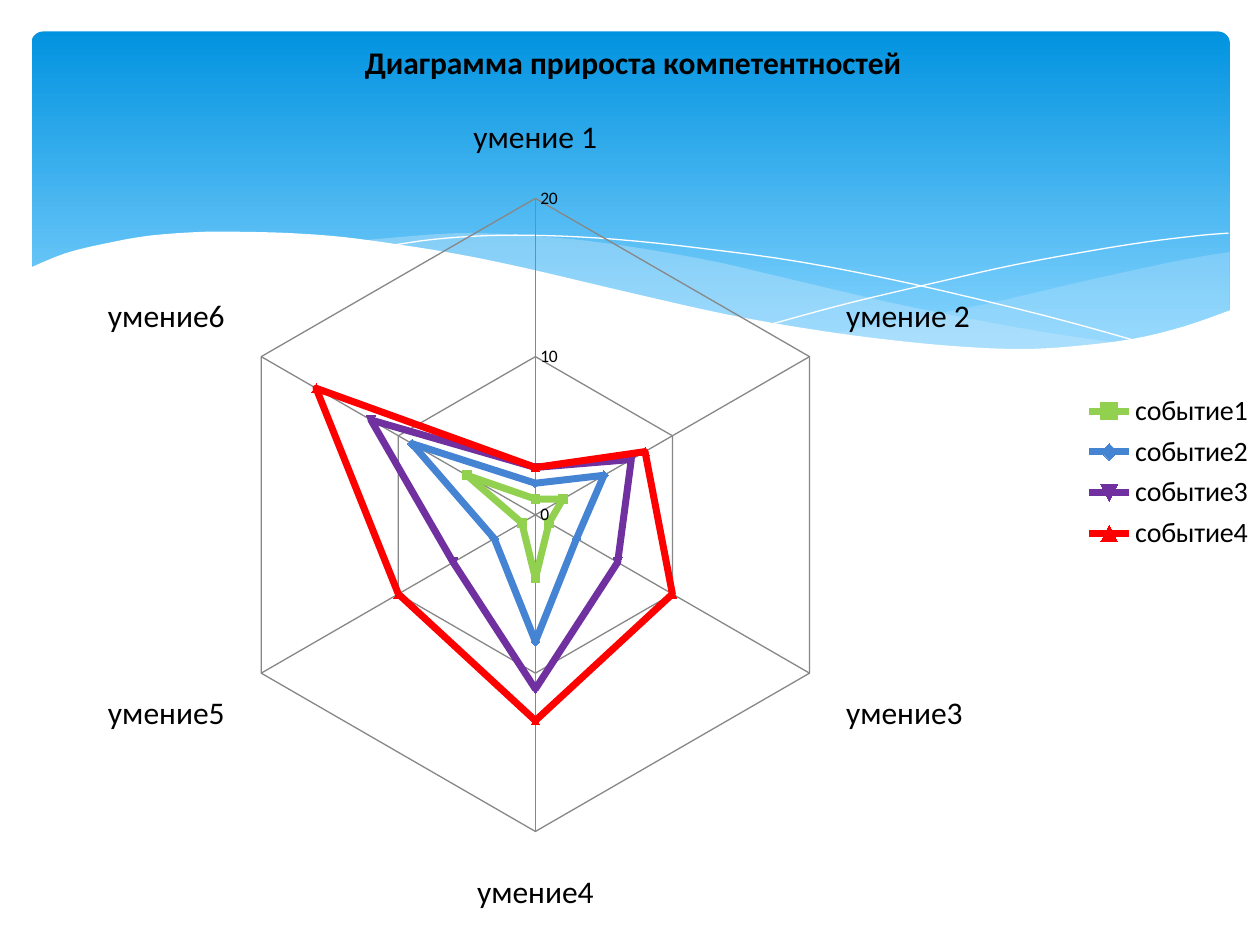
from lxml import etree
from pptx import Presentation
from pptx.chart.data import CategoryChartData
from pptx.dml.color import RGBColor
from pptx.enum.chart import XL_CHART_TYPE as ChartType
from pptx.enum.chart import XL_LEGEND_POSITION as LegendPosition
from pptx.enum.chart import XL_MARKER_STYLE as MarkerStyle
from pptx.enum.chart import XL_TICK_MARK as TickMark
from pptx.enum.shapes import MSO_SHAPE as Preset
from pptx.oxml.ns import qn
from pptx.util import Inches, Pt

COLORS = {
    "sky_top": "0293E0", "sky_bottom": "83D3FE", "haze": "C6E7FC",
    "white": "FFFFFF", "text": "000000", "grid": "878787",
}
FONT = "Calibri"
TITLE = "Диаграмма прироста компетентностей"
SKILLS = ["умение 1", "умение 2", "умение3", "умение4", "умение5", "умение6"]
EVENTS = [
    ("событие1", (1, 2, 1, 4, 1, 5), "92D050"),
    ("событие2", (2, 5, 3, 8, 3, 9), "4584D3"),
    ("событие3", (3, 7, 6, 11, 6, 12), "7030A0"),
    ("событие4", (3, 8, 10, 13, 10, 16), "FF0000"),
]

# Each wave is a list of smooth edges, joined end to end; points are in inches.
RIGHT_HAZE = [
    [(9.76, 2), (9.35, 2.07), (8.61, 2.23), (7.79, 2.42), (6.61, 2.65)],
    [(6.61, 2.65), (7.19, 2.72), (7.69, 2.77), (8.14, 2.78), (8.63, 2.75),
     (9.13, 2.67), (9.49, 2.57), (9.76, 2.47)],
]
MIDDLE_HAZE = [
    [(8.93, 2.73), (8.37, 2.65), (7.75, 2.54), (7.06, 2.4), (6.29, 2.22),
     (5.69, 2.08), (5.14, 1.98), (4.65, 1.91), (4.2, 1.87), (3.8, 1.85),
     (3.44, 1.86), (2.86, 1.91)],
    [(2.86, 1.91), (3.42, 1.99), (4.04, 2.11), (4.91, 2.32), (5.66, 2.48),
     (6.34, 2.61), (6.95, 2.7), (7.48, 2.76), (8.07, 2.78), (8.57, 2.77),
     (8.93, 2.73)],
]
FALLING_LINE = [
    [(3.09, 1.95), (3.44, 1.9), (3.87, 1.87), (4.33, 1.87), (4.89, 1.9),
     (5.56, 1.97), (6.36, 2.08), (7.27, 2.26), (8.31, 2.51), (9.07, 2.72)],
]
RISING_LINE = [
    [(6.13, 2.57), (6.72, 2.41), (7.48, 2.23), (8.06, 2.1), (8.66, 1.99),
     (9.1, 1.92), (9.51, 1.87), (9.75, 1.85)],
]
WHITE_WAVE = [
    [(9.77, 2.46), (9.4, 2.59), (8.99, 2.69), (8.5, 2.75), (8.09, 2.77),
     (7.61, 2.75), (7.08, 2.7), (6.48, 2.62), (5.79, 2.5), (5.03, 2.33),
     (4.18, 2.13), (3.65, 2.02), (3.16, 1.94), (2.71, 1.88), (2.3, 1.85),
     (1.93, 1.84), (1.61, 1.84), (1.19, 1.87), (0.85, 1.93), (0.52, 2.01),
     (0.23, 2.13)],
    [(0.23, 3.29), (9.77, 3.29)],
]
# edges, fill colour, opacity in percent, line colour
WAVES = [
    (RIGHT_HAZE, "haze", 29, None),
    (MIDDLE_HAZE, "haze", 40, None),
    (FALLING_LINE, None, None, "white"),
    (RISING_LINE, None, None, "white"),
    (WHITE_WAVE, "white", 100, None),
]
STEPS = 4


def rgb(name):
    return RGBColor.from_string(COLORS.get(name, name))


def smooth(points):
    """Return a Catmull-Rom curve through the points."""
    padded = [points[0], *points, points[-1]]
    curve = [points[0]]
    for a, b, c, d in zip(padded, padded[1:], padded[2:], padded[3:]):
        for step in range(1, STEPS + 1):
            t = step / STEPS
            curve.append(tuple(
                (2 * q + (r - p) * t + (2 * p - 5 * q + 4 * r - s) * t ** 2
                 + (3 * q - p - 3 * r + s) * t ** 3) / 2
                for p, q, r, s in zip(a, b, c, d)))
    return curve


def add_sky(page):
    sky = page.shapes.add_shape(
        Preset.ROUNDED_RECTANGLE, Inches(0.25), Inches(0.25), Inches(9.51), Inches(2.7))
    sky.shadow.inherit = False
    sky.adjustments[0] = 0.034
    sky.line.fill.background()
    sky.fill.gradient()
    sky.fill.gradient_angle = 270
    stops = zip(sky.fill.gradient_stops, (0, 0.9), ("sky_top", "sky_bottom"))
    for stop, position, color in stops:
        stop.position = position
        stop.color.rgb = rgb(color)


def add_wave(page, edges, fill, opacity, line):
    points = [(Inches(x), Inches(y)) for edge in edges for x, y in smooth(edge)]
    builder = page.shapes.build_freeform(*points[0])
    builder.add_line_segments(points[1:], close=fill is not None)
    wave = builder.convert_to_shape()
    wave.shadow.inherit = False
    if fill:
        wave.fill.solid()
        wave.fill.fore_color.rgb = rgb(fill)
        color = next(wave._element.spPr.iter(qn("a:srgbClr")))
        etree.SubElement(color, qn("a:alpha"), val=str(opacity * 1000))
    else:
        wave.fill.background()
    if line:
        wave.line.color.rgb = rgb(line)
        wave.line.width = Pt(0)
    else:
        wave.line.fill.background()


def set_layout(element, index, target=None, **fractions):
    """Place a chart part by fractions of the chart's size."""
    for old in element.findall(qn("c:layout")):
        element.remove(old)
    layout = etree.Element(qn("c:layout"))
    manual = etree.SubElement(layout, qn("c:manualLayout"))
    if target:
        etree.SubElement(manual, qn("c:layoutTarget"), val=target)
    for mode in ("xMode", "yMode"):
        etree.SubElement(manual, qn(f"c:{mode}"), val="edge")
    for key, value in fractions.items():
        etree.SubElement(manual, qn(f"c:{key}"), val=str(value))
    element.insert(index, layout)


def set_font(font, size, bold=False):
    values = {"name": FONT, "size": Pt(size), "bold": bold}
    for key, value in values.items():
        setattr(font, key, value)
    font.color.rgb = rgb("text")


def style_axes(chart):
    for axis, size in ((chart.category_axis, 18), (chart.value_axis, 10)):
        axis.major_tick_mark = axis.minor_tick_mark = TickMark.NONE
        axis.has_major_gridlines = True
        set_font(axis.tick_labels.font, size)
        for line in (axis.format.line, axis.major_gridlines.format.line):
            line.color.rgb = rgb("grid")
            line.width = Pt(0.75)
    scale = {"minimum_scale": 0, "maximum_scale": 20, "major_unit": 10}
    for key, value in scale.items():
        setattr(chart.value_axis, key, value)


def add_radar(page, deck):
    data = CategoryChartData(number_format="General")
    data.categories = SKILLS
    for name, values, _ in EVENTS:
        data.add_series(name, values)
    chart = page.shapes.add_chart(
        ChartType.RADAR_MARKERS, 0, 0, deck.slide_width, deck.slide_height, data).chart
    set_font(chart.font, 10)
    style_axes(chart)

    for series, (_, _, color) in zip(chart.plots[0].series, EVENTS):
        series.smooth = False
        series.format.line.color.rgb = rgb(color)
        series.format.line.width = Pt(4)
        series.marker.style = MarkerStyle.AUTOMATIC
        series.marker.size = 5
        series.marker.format.fill.solid()
        series.marker.format.fill.fore_color.rgb = rgb(color)
        series.marker.format.line.color.rgb = rgb(color)

    chart.has_title = True
    frame = chart.chart_title.text_frame
    frame.text = TITLE
    set_font(frame.paragraphs[0].runs[0].font, 18, bold=True)
    set_layout(chart.chart_title._element, 1, x=0.285, y=0.037)

    chart.has_legend = True
    chart.legend.position = LegendPosition.RIGHT
    chart.legend.include_in_layout = False
    set_font(chart.legend.font, 16)
    set_layout(chart.legend._element, 1, x=0.855, y=0.41, w=0.145, h=0.18)

    plot_area = chart._chartSpace.chart.plotArea
    set_layout(plot_area, 0, "inner", x=0.17, y=0.21, w=0.51, h=0.67)
    plot_format = etree.SubElement(plot_area, qn("c:spPr"))
    etree.SubElement(plot_format, qn("a:noFill"))


def main():
    deck = Presentation()
    deck.slide_width, deck.slide_height = Inches(10), Inches(7.5)
    page = deck.slides.add_slide(deck.slide_layouts[6])
    add_sky(page)
    for wave in WAVES:
        add_wave(page, *wave)
    add_radar(page, deck)
    deck.save("out.pptx")


if __name__ == "__main__":
    main()
